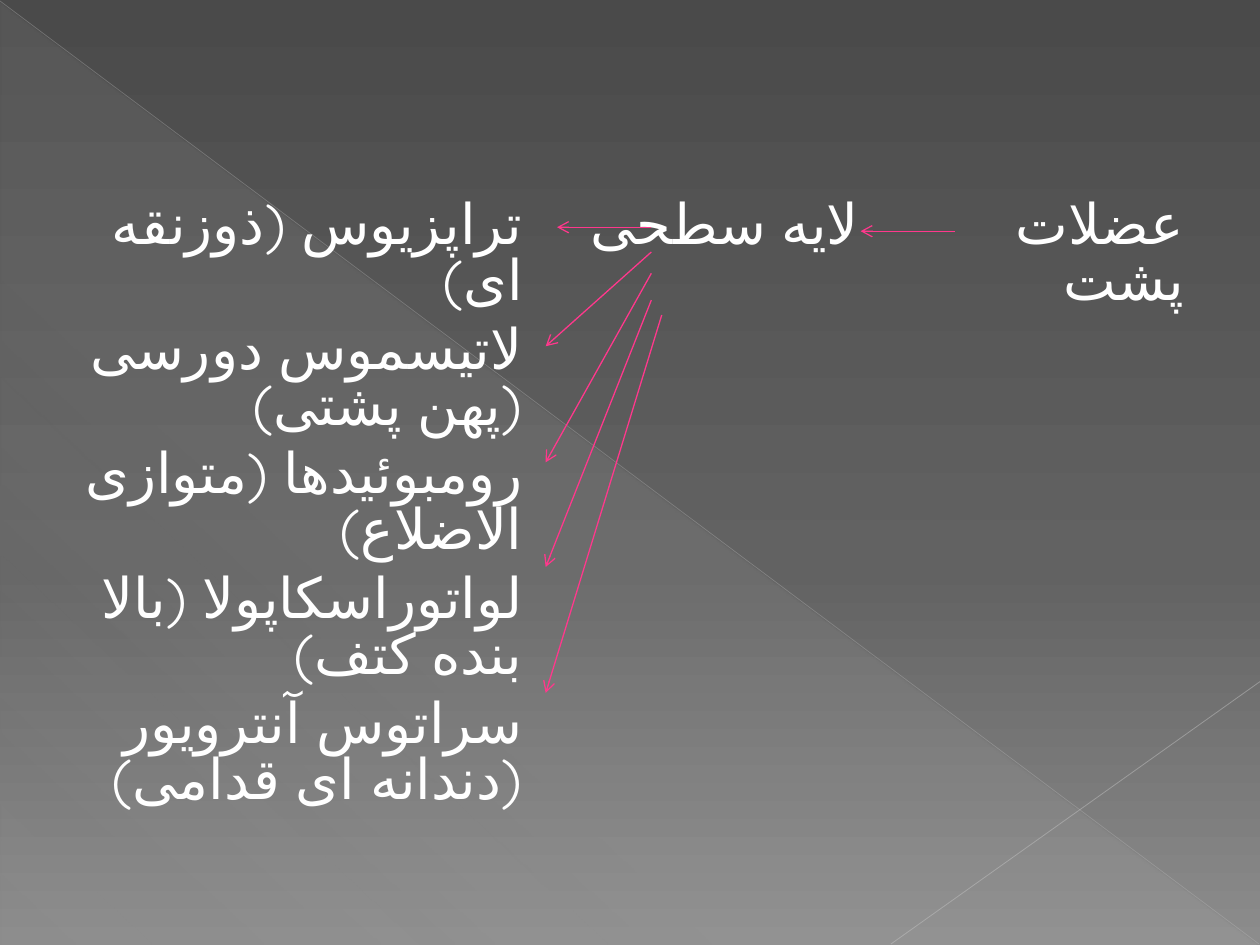
from lxml.etree import SubElement
from pptx import Presentation
from pptx.dml.color import RGBColor
from pptx.enum.lang import MSO_LANGUAGE_ID
from pptx.enum.shapes import MSO_CONNECTOR, MSO_SHAPE
from pptx.enum.text import MSO_ANCHOR, PP_ALIGN
from pptx.oxml.ns import qn
from pptx.util import Cm, Pt

FONT = "Quicksand"
NO_STYLE = "{2D5ABB26-0587-4C30-8999-92F81FD0307C}"
COLUMNS = [9.52, 6.78, 6.55]
ROWS = [2.41, 2.18, 2.41, 2.41, 2.41]
MUSCLES = [
    "تراپزیوس (ذوزنقه ای)",
    "لاتیسموس دورسی (پهن پشتی)",
    "رومبوئیدها (متوازی الاضلاع)",
    "لواتوراسکاپولا (بالا بنده کتف)",
    "سراتوس آنترویور (دندانه ای قدامی)",
]
ARROWS = [
    (17.98, 0.77, 16.08, 0.77),
    (11.86, 0.69, 9.96, 0.69),
    (11.86, 1.19, 9.73, 3.09),
    (11.86, 1.62, 9.73, 5.43),
    (11.86, 2.16, 9.73, 7.54),
    (12.07, 2.46, 9.73, 10.08),
]


def rgb(color):
    """Return the colour for a hex string."""
    return RGBColor.from_string(color)


def set_alpha(clr, percent):
    """Make a colour element partly transparent."""
    SubElement(clr, qn("a:alpha"), val=str(percent * 1000))


def set_gradient(fill, element, stops, angle):
    """Give a fill gradient stops of (position, colour, opacity)."""
    fill.gradient()
    grad = next(element.iter(qn("a:gradFill")))
    gs_list = grad.find(qn("a:gsLst"))
    for gs in list(gs_list):
        gs_list.remove(gs)
    for pos, color, opacity in stops:
        gs = SubElement(gs_list, qn("a:gs"), pos=str(pos * 1000))
        clr = SubElement(gs, qn("a:srgbClr"), val=color)
        if opacity < 100:
            set_alpha(clr, opacity)
    grad.find(qn("a:lin")).set("ang", str(angle * 60000))


def add_line(s, x1, y1, x2, y2, color, width, opacity=100, arrow=False):
    """Draw a straight line, optionally with an arrowhead at its end."""
    line = s.shapes.add_connector(
        MSO_CONNECTOR.STRAIGHT, Cm(x1), Cm(y1), Cm(x2), Cm(y2))
    line.line.color.rgb = rgb(color)
    line.line.width = Pt(width)
    sp_pr = line.element.spPr
    if opacity < 100:
        set_alpha(next(sp_pr.iter(qn("a:srgbClr"))), opacity)
    if arrow:
        SubElement(sp_pr.find(qn("a:ln")), qn("a:tailEnd"), type="arrow")
    SubElement(sp_pr, qn("a:effectLst"))


def write_text(tf, text, size=32, color="FFFFFF", spacing=0.8):
    """Write one right-to-left paragraph."""
    p = tf.paragraphs[0]
    p.alignment = PP_ALIGN.RIGHT
    p.line_spacing = spacing
    p._p.get_or_add_pPr().set("rtl", "1")
    r = p.add_run()
    r.text = text
    r.font.size = Pt(size)
    r.font.name = FONT
    r.font.language_id = MSO_LANGUAGE_ID.FARSI
    r.font.color.rgb = rgb(color)
    SubElement(r._r.get_or_add_rPr(), qn("a:cs"), typeface=FONT)


def add_backdrop(s, width, height):
    """Draw the graded background, its triangle and its diagonal lines."""
    set_gradient(s.background.fill, s.element,
                 [(0, "4A4A4A", 100), (60, "626262", 100), (100, "8C8C8C", 100)], 90)
    sp = s.shapes.add_shape(
        MSO_SHAPE.RIGHT_TRIANGLE, Cm(0.02), Cm(0.05), Cm(width - 0.05), Cm(height - 0.05))
    sp.shadow.inherit = False
    sp.line.fill.background()
    set_gradient(sp.fill, sp.element,
                 [(0, "D2D2D2", 10), (70, "D2D2D2", 8), (100, "D2D2D2", 1)], 133)
    add_line(s, 0, 0.02, width - 0.02, height - 0.02, "BFBFBF", 0.39, 35)
    add_line(s, width, 13.74, 17.96, height - 0.02, "C6C6C6", 0.47, 45)


def add_muscle_table(s, x, y, width, height):
    """Place the table of back muscles in the given box."""
    frame = s.shapes.add_table(
        len(ROWS), len(COLUMNS), Cm(x), Cm(y), Cm(width), Cm(height))
    table = frame.table
    table.first_row = table.horz_banding = False
    next(frame.element.iter(qn("a:tableStyleId"))).text = NO_STYLE
    for column, size in zip(table.columns, COLUMNS):
        column.width = Cm(size)
    for row, size in zip(table.rows, ROWS):
        row.height = Cm(size)
    frame.height = Cm(height)
    for cell in table.iter_cells():
        cell.fill.background()
        cell.vertical_anchor = MSO_ANCHOR.TOP
    for i, muscle in enumerate(MUSCLES):
        write_text(table.cell(i, 0).text_frame, muscle)
    write_text(table.cell(0, 1).text_frame, "لایه سطحی")
    write_text(table.cell(0, 2).text_frame, "عضلات پشت")


def add_arrows(s, x, y):
    """Draw the arrows from group to layer to muscles."""
    for x1, y1, x2, y2 in ARROWS:
        add_line(s, x + x1, y + y1, x + x2, y + y2, "FF388C", 0.75, arrow=True)


def main():
    """Build and save the slide."""
    prs = Presentation()
    prs.slide_width, prs.slide_height = Cm(25.4), Cm(19.05)
    s = prs.slides.add_slide(prs.slide_layouts[6])
    add_backdrop(s, 25.4, 19.05)
    add_muscle_table(s, 1.27, 3.89, 22.86, 13.69)
    add_arrows(s, 1.27, 3.89)
    prs.save("out.pptx")


if __name__ == "__main__":
    main()
